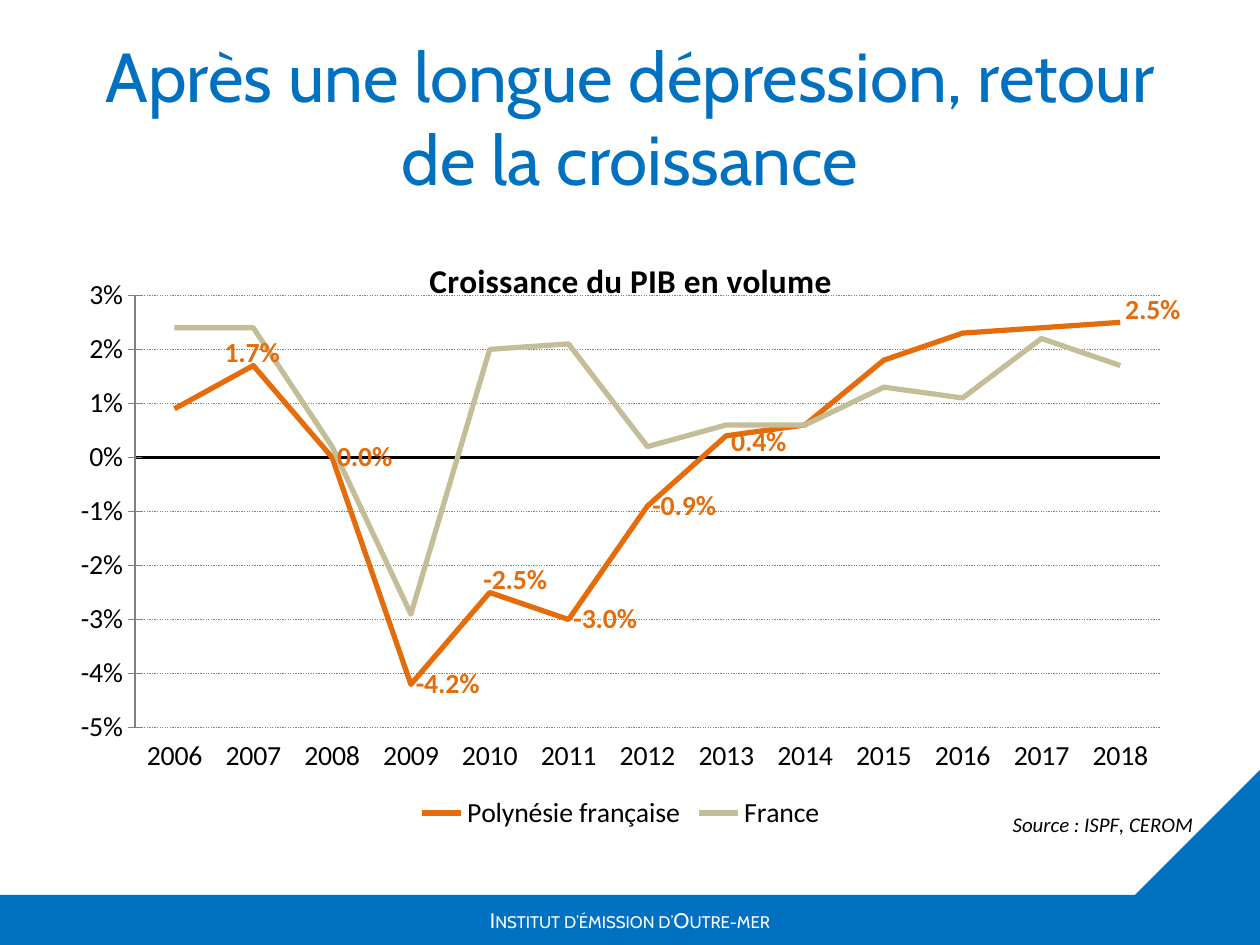
from dataclasses import dataclass

from lxml import etree
from pptx import Presentation
from pptx.chart.data import CategoryChartData
from pptx.dml.color import RGBColor
from pptx.enum.chart import (XL_CHART_TYPE, XL_LABEL_POSITION, XL_LEGEND_POSITION,
                             XL_TICK_LABEL_POSITION, XL_TICK_MARK)
from pptx.enum.dml import MSO_LINE
from pptx.enum.shapes import MSO_SHAPE
from pptx.enum.text import MSO_ANCHOR, PP_ALIGN
from pptx.oxml.ns import qn
from pptx.util import Emu, Pt

RECT, TRIANGLE = MSO_SHAPE.RECTANGLE, MSO_SHAPE.RIGHT_TRIANGLE
MIDDLE, CENTER = MSO_ANCHOR.MIDDLE, PP_ALIGN.CENTER
LINE, BOTTOM = XL_CHART_TYPE.LINE, XL_LEGEND_POSITION.BOTTOM
LOW, RIGHT = XL_TICK_LABEL_POSITION.LOW, XL_LABEL_POSITION.RIGHT
NO_TICK, CROSS = XL_TICK_MARK.NONE, XL_TICK_MARK.CROSS
DOTTED = MSO_LINE.ROUND_DOT

PX_PER_INCH = 126
COLORS = {"blue": "0070C0", "white": "FFFFFF", "black": "000000",
          "gray": "808080", "orange": "E46C0A", "sand": "C4BD97"}


@dataclass
class Block:
    shape: int
    x: int
    y: int
    w: int
    h: int
    rotation: int = 0


@dataclass
class Series:
    name: str
    color: str
    percents: tuple


FOOTER = Block(RECT, 0, 895, 1260, 50)
CORNER = Block(TRIANGLE, 1134, 770, 126, 126, 270)
YEARS = [str(year) for year in range(2006, 2019)]
SERIES = [
    Series("Polynésie française", "orange",
           (0.9, 1.7, 0, -4.2, -2.5, -3, -0.9, 0.4, 0.6, 1.8, 2.3, 2.4, 2.5)),
    Series("France", "sand",
           (2.4, 2.4, 0.2, -2.9, 2, 2.1, 0.2, 0.6, 0.6, 1.3, 1.1, 2.2, 1.7)),
]
# Label shifts as fractions of the chart, and points left unlabelled
LABEL_SHIFTS = {1: (-0.03, -0.02), 4: (-0.01, -0.02), 7: (0.0, 0.01), 12: (0.0, -0.02)}
UNLABELLED = (0, 8, 9, 10, 11)


def px(n: int) -> Emu:
    return Emu(round(n * 914400 / PX_PER_INCH))


def rgb(name: str) -> RGBColor:
    return RGBColor.from_string(COLORS[name])


def style_font(font, size: float, color: str, name: str, bold=False, italic=False) -> None:
    font.size, font.name = Pt(size), name
    font.bold, font.italic = bold, italic
    font.color.rgb = rgb(color)


def style_line(line, color: str, width: float) -> None:
    line.color.rgb = rgb(color)
    line.width = Pt(width)


def set_text(sp, text: str, size: float, color: str):
    tf = sp.text_frame
    tf.text = text
    tf.word_wrap = True
    tf.vertical_anchor = MIDDLE
    p = tf.paragraphs[0]
    p.alignment = CENTER
    r = p.runs[0]
    style_font(r.font, size, color, "Cabin")
    return r


def add_block(slide, block: Block):
    sp = slide.shapes.add_shape(block.shape, px(block.x), px(block.y), px(block.w), px(block.h))
    sp.rotation = block.rotation
    sp.shadow.inherit = False
    sp.fill.solid()
    sp.fill.fore_color.rgb = rgb("blue")
    sp.line.fill.background()
    return sp


def set_layout(element, **values) -> None:
    """Give a chart part a manual layout, placed where the schema expects it."""
    for old in element.findall(qn("c:layout")):
        element.remove(old)
    before = {qn(tag) for tag in ("c:idx", "c:tx", "c:legendPos", "c:legendEntry")}
    layout = etree.Element(qn("c:layout"))
    manual = etree.SubElement(layout, qn("c:manualLayout"))
    for tag, value in values.items():
        etree.SubElement(manual, qn(f"c:{tag}")).set("val", str(value))
    element.insert(sum(child.tag in before for child in element), layout)


def set_title(title, text: str, size: float, x: float, y: float, **style) -> None:
    tf = title.text_frame
    tf.text = text
    style_font(tf.paragraphs[0].runs[0].font, size, "black", "Calibri", **style)
    set_layout(title._element, xMode="edge", yMode="edge", x=x, y=y)


def label_points(series, color: str) -> None:
    labels = series.data_labels
    labels.show_value = True
    labels.number_format, labels.number_format_is_linked = "0.0%", False
    labels.position = RIGHT
    style_font(labels.font, 16, color, "Calibri", bold=True)
    for index, (x, y) in LABEL_SHIFTS.items():
        label = series.points[index].data_label
        style_font(label.font, 16, color, "Calibri", bold=True)
        label.position = RIGHT
        element = label._get_or_add_dLbl()
        set_layout(element, x=x, y=y)
        number_format = etree.Element(qn("c:numFmt"), formatCode="0.0%", sourceLinked="0")
        element.insert(2, number_format)
    for index in UNLABELLED:
        element = series.points[index].data_label._get_or_add_dLbl()
        for child in list(element)[1:]:
            element.remove(child)
        etree.SubElement(element, qn("c:delete")).set("val", "1")


def add_growth_chart(slide) -> None:
    data = CategoryChartData(number_format="0.0%")
    data.categories = YEARS
    for s in SERIES:
        data.add_series(s.name, [round(v / 100, 3) for v in s.percents])
    chart = slide.shapes.add_chart(LINE, px(63), px(220), px(1134), px(624), data).chart
    style_font(chart.font, 16, "black", "Calibri")
    set_title(chart.chart_title, "Croissance du PIB en volume", 19.2, 0.32, 0.05, bold=True)
    set_layout(chart._chartSpace.chart.plotArea, layoutTarget="inner", xMode="edge",
               yMode="edge", x=0.064, y=0.122, w=0.91, h=0.7)

    # Legend
    chart.has_legend = True
    chart.legend.position = BOTTOM
    chart.legend.include_in_layout = False
    set_layout(chart.legend._element, xMode="edge", yMode="edge", x=0.31, y=0.93, w=0.37, h=0.07)

    # Axes
    years, growth = chart.category_axis, chart.value_axis
    years.tick_label_position = LOW
    years.major_tick_mark = years.minor_tick_mark = NO_TICK
    style_line(years.format.line, "black", 1.25)
    set_title(years.axis_title, "Source : ISPF, CEROM", 12, 0.84, 0.95, italic=True)
    growth.minimum_scale, growth.maximum_scale, growth.major_unit = -0.05, 0.03, 0.01
    growth.major_tick_mark, growth.minor_tick_mark = CROSS, NO_TICK
    growth.tick_labels.number_format = "0%"
    growth.tick_labels.number_format_is_linked = False
    style_line(growth.format.line, "gray", 0.75)
    style_line(growth.major_gridlines.format.line, "gray", 0.75)
    growth.major_gridlines.format.line.dash_style = DOTTED

    # Lines and labels
    plot = chart.plots[0]
    plot.vary_by_categories = False
    for series, s in zip(plot.series, SERIES):
        series.smooth = False
        style_line(series.format.line, s.color, 3)
    label_points(plot.series[0], SERIES[0].color)


def main() -> None:
    prs = Presentation()
    prs.slide_width, prs.slide_height = px(1260), px(945)
    slide = prs.slides.add_slide(prs.slide_layouts[6])

    # Footer band and corner
    r = set_text(add_block(slide, FOOTER), "Institut d’émission d’Outre-mer", 12, "white")
    r.font._element.set("cap", "small")
    add_block(slide, CORNER)

    # Title
    title = slide.shapes.add_textbox(px(63), px(38), px(1134), px(157))
    set_text(title, "Après une longue dépression, retour de la croissance", 39.6, "blue")

    add_growth_chart(slide)
    prs.save("out.pptx")


if __name__ == "__main__":
    main()
